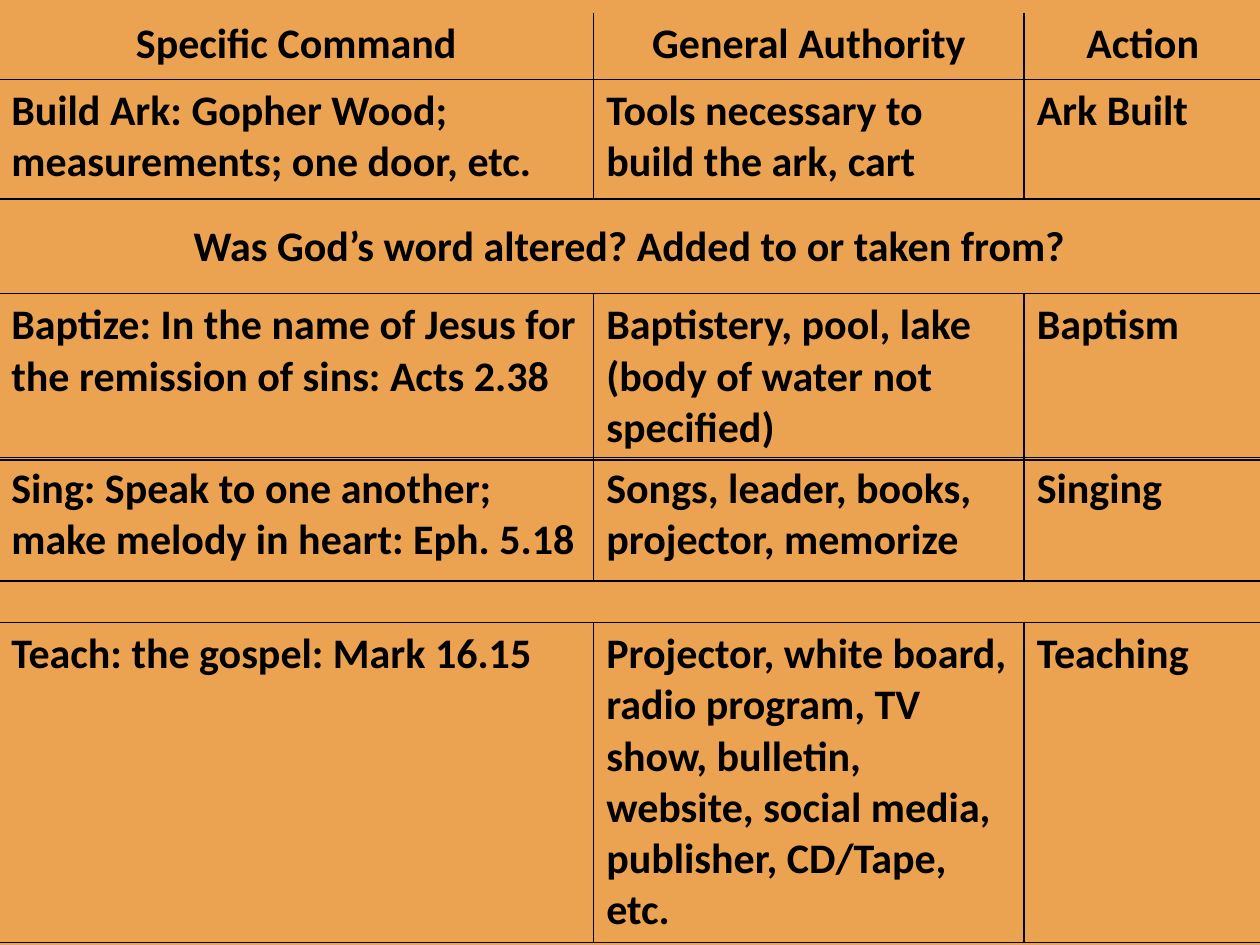
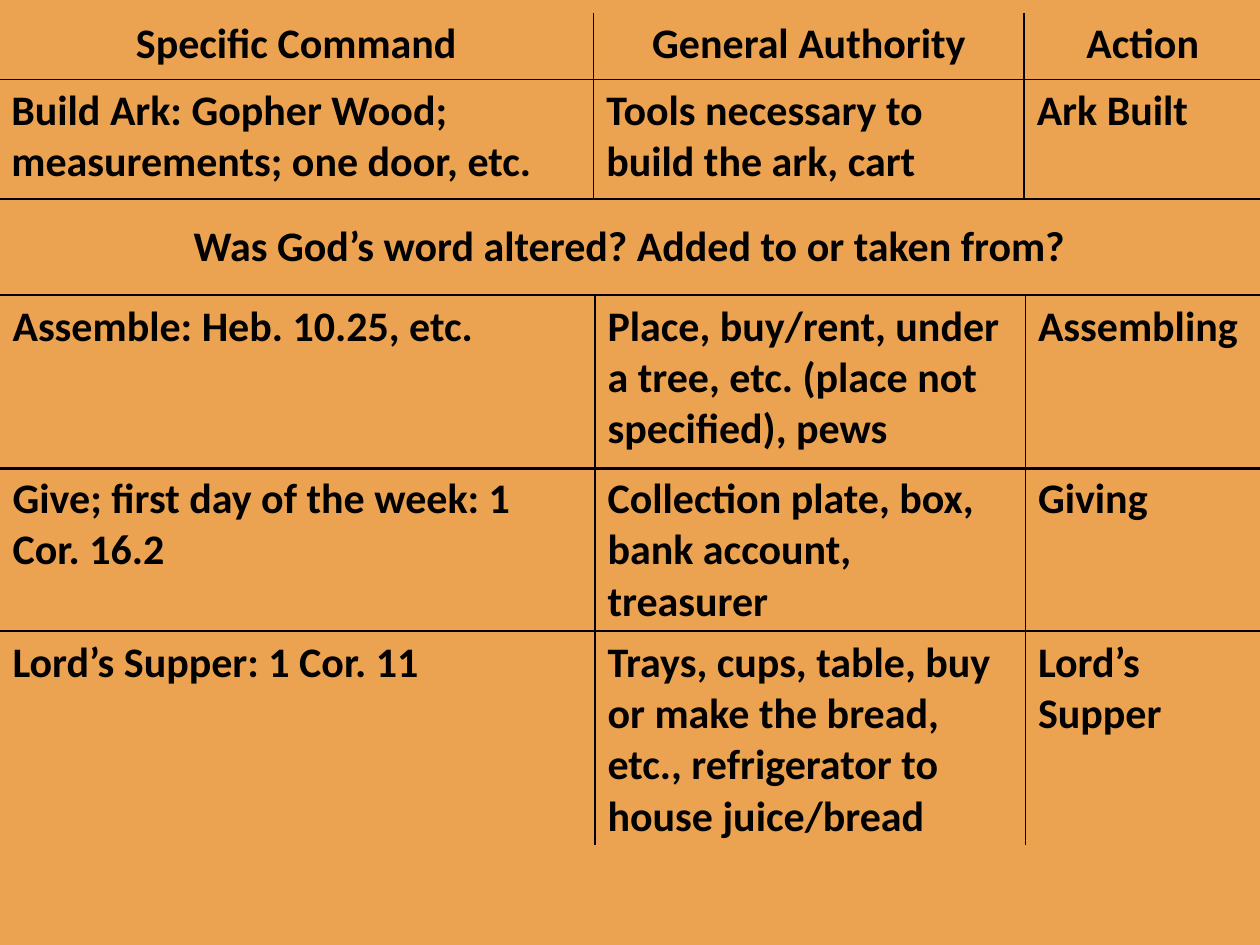
from dataclasses import dataclass

from lxml import etree
from pptx import Presentation
from pptx import util as u
from pptx.dml import color
from pptx.enum import shapes, text
from pptx.oxml import ns


@dataclass(frozen=True)
class Theme:
    sand: str = "EBA352"
    ink: str = "000000"
    face: str = "Calibri"
    size: float = 24
    rule: float = 1


WIDE, HIGH = 720, 540
LEFT = -0.72
COLS = (340, 246, 135.5)
HEAD = ("Specific Command", "General Authority", "Action")
ARK = (
    "Build Ark: Gopher Wood; measurements; one door, etc.",
    "Tools necessary to build the ark, cart",
    "Ark Built",
)
ASK = "Was God’s word altered? Added to or taken from?"

PAGES = (
    (
        (167.8, 93.6, "LRTB", (
            "Baptize: In the name of Jesus for the remission of sins: Acts 2.38",
            "Baptistery, pool, lake (body of water not specified)",
            "Baptism",
        ), LEFT),
        (261.4, 70.6, "LRTB", (
            "Sing: Speak to one another; make melody in heart: Eph. 5.18",
            "Songs, leader, books, projector, memorize",
            "Singing",
        ), LEFT),
        (355.7, 180, "LRTB", (
            "Teach: the gospel: Mark 16.15",
            "Projector, white board, radio program, TV show, bulletin, "
            "website, social media, publisher, CD/Tape, etc.",
            "Teaching",
        ), LEFT),
    ),
    (
        (168.5, 99.4, "LRTB", (
            "Assemble: Heb. 10.25, etc.",
            "Place, buy/rent, under a tree, etc. (place not specified), pews",
            "Assembling",
        ), 0),
        (267.1, 93.6, "LRTB", (
            "Give; first day of the week: 1 Cor. 16.2",
            "Collection plate, box, bank account, treasurer",
            "Giving",
        ), 0),
        (360.7, 122.4, "LRT", (
            "Lord’s Supper: 1 Cor. 11",
            "Trays, cups, table, buy or make the bread, etc., "
            "refrigerator to house juice/bread",
            "Lord’s Supper",
        ), 0),
    ),
)


class Deck:
    def __init__(self, theme):
        self.theme = theme
        self.show = Presentation()
        self.show.slide_width = u.Pt(WIDE)
        self.show.slide_height = u.Pt(HIGH)
        self.slide = None

    def page(self):
        self.slide = self.show.slides.add_slide(self.show.slide_layouts[6])
        back = self.slide.shapes.add_shape(
            shapes.MSO_SHAPE.RECTANGLE, 0, 0, u.Pt(WIDE), u.Pt(HIGH))
        back.shadow.inherit = False
        back.fill.solid()
        back.fill.fore_color.rgb = color.RGBColor.from_string(self.theme.sand)
        back.line.fill.background()

    def label(self, frame, words, align):
        frame.text = words
        para = frame.paragraphs[0]
        para.alignment = align
        font = para.runs[0].font
        style = {"name": self.theme.face, "size": u.Pt(self.theme.size), "bold": True}
        for key, value in style.items():
            setattr(font, key, value)
        font.color.rgb = color.RGBColor.from_string(self.theme.ink)

    def edge(self, cell, side, shown):
        line = etree.SubElement(cell._tc.get_or_add_tcPr(), ns.qn(f"a:ln{side}"))
        line.set("w", str(u.Pt(self.theme.rule)))
        if shown:
            fill = etree.SubElement(line, ns.qn("a:solidFill"))
            etree.SubElement(fill, ns.qn("a:srgbClr")).set("val", self.theme.ink)
        else:
            etree.SubElement(line, ns.qn("a:noFill"))

    def row(self, top, high, sides, cells, left=LEFT, align=text.PP_ALIGN.LEFT):
        grid = self.slide.shapes.add_table(
            1, len(COLS), u.Pt(left), u.Pt(top), u.Pt(sum(COLS)), u.Pt(high)).table
        for key, value in {"first_row": False, "horz_banding": False}.items():
            setattr(grid, key, value)
        last = len(COLS) - 1
        for spot, (wide, words) in enumerate(zip(COLS, cells)):
            grid.columns[spot].width = u.Pt(wide)
            cell = grid.cell(0, spot)
            outer = {0: "L", last: "R"}.get(spot)
            for side in "LRTB":
                self.edge(cell, side, side in sides and side != outer)
            cell.fill.background()
            self.label(cell.text_frame, words, align)

    def note(self, top, high, words):
        box = self.slide.shapes.add_textbox(
            u.Pt(LEFT), u.Pt(top), u.Pt(WIDE - LEFT), u.Pt(high))
        frame = box.text_frame
        style = {"word_wrap": True, "auto_size": text.MSO_AUTO_SIZE.SHAPE_TO_FIT_TEXT}
        for key, value in style.items():
            setattr(frame, key, value)
        self.label(frame, words, text.PP_ALIGN.CENTER)


def main():
    deck = Deck(Theme())
    for rows in PAGES:
        deck.page()
        deck.row(7.2, 38.2, "LRB", HEAD, align=text.PP_ALIGN.CENTER)
        deck.row(45.4, 68.4, "LRTB", ARK)
        for entry in rows:
            deck.row(*entry)
        deck.note(121.7, 36, ASK)
    deck.show.save("out.pptx")


if __name__ == "__main__":
    main()
